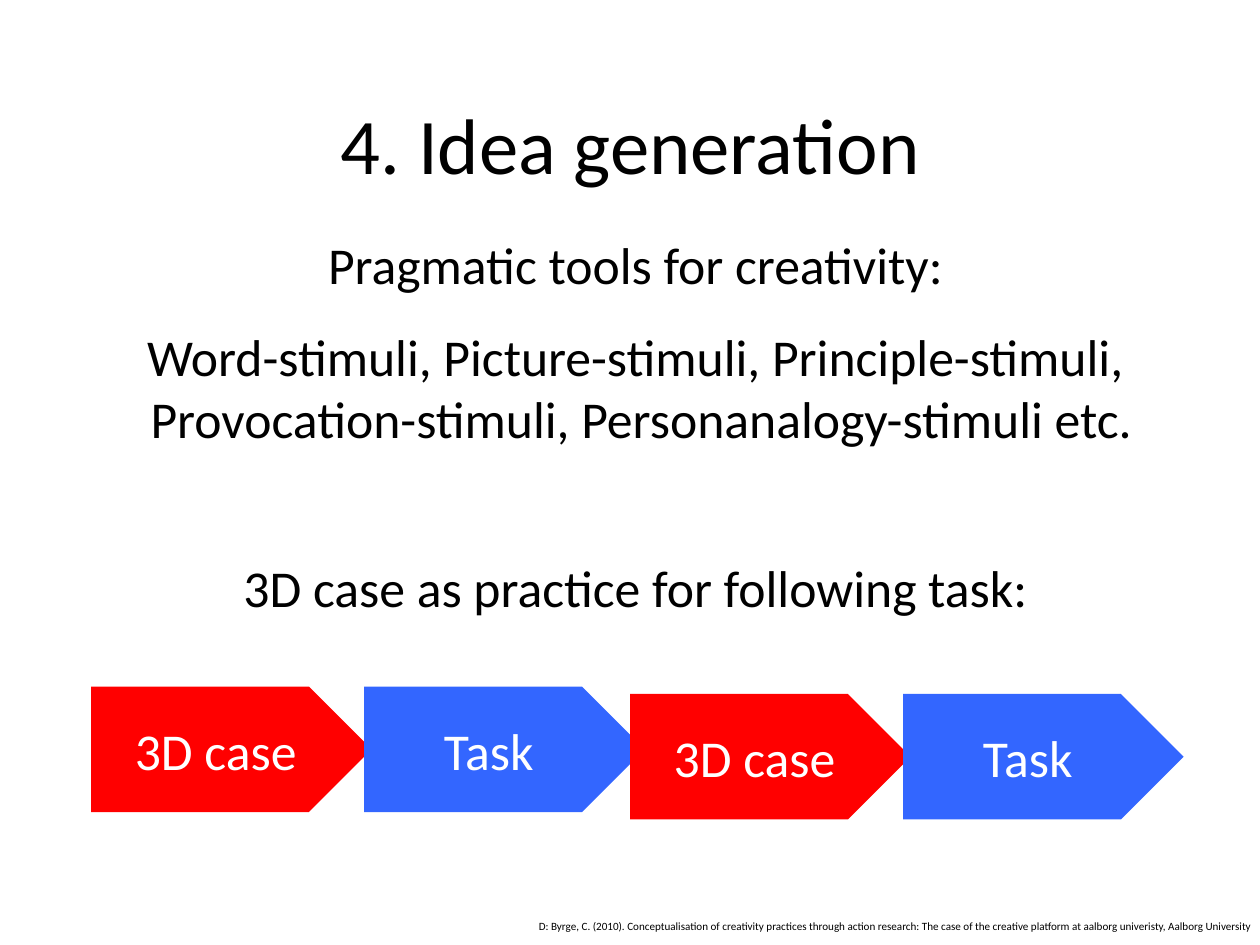
from pptx import Presentation
from pptx.dml.color import RGBColor
from pptx.enum.shapes import MSO_SHAPE as Preset
from pptx.enum.text import MSO_ANCHOR as Anchor, PP_ALIGN as Align
from pptx.util import Pt

BLACK = RGBColor(0x00, 0x00, 0x00)
WHITE = RGBColor(0xFF, 0xFF, 0xFF)
RED = RGBColor(0xFF, 0x00, 0x00)
BLUE = RGBColor(0x33, 0x66, 0xFF)

TITLE_SIZE, BODY_SIZE, SOURCE_SIZE = 64, 42, 9
ARROW_WIDTH, ARROW_HEIGHT, ARROW_STEP = 228, 102, 222


class SlideBuilder:
    """Holds the text style and the current slide."""

    def __init__(self, slide, font="Calibri"):
        self.slide = slide
        self.font = font

    def fill_frame(self, frame, lines, size, color, anchor):
        """Fill a frame with (text, space after) lines, centred."""
        frame.word_wrap = True
        frame.vertical_anchor = anchor
        for index, (text, space_after) in enumerate(lines):
            paragraph = frame.add_paragraph() if index else frame.paragraphs[0]
            paragraph.alignment = Align.CENTER
            paragraph.space_after = Pt(space_after)
            run = paragraph.add_run()
            run.text = text
            run.font.name = self.font
            run.font.size = Pt(size)
            run.font.color.rgb = color

    def text(self, left, top, width, height, lines, size,
             anchor=Anchor.TOP, side_margin=7.2):
        box = self.slide.shapes.add_textbox(
            Pt(left), Pt(top), Pt(width), Pt(height))
        frame = box.text_frame
        frame.margin_left = frame.margin_right = Pt(side_margin)
        self.fill_frame(frame, lines, size, BLACK, anchor)

    def arrow(self, left, top, label, color):
        shape = self.slide.shapes.add_shape(
            Preset.PENTAGON, Pt(left), Pt(top),
            Pt(ARROW_WIDTH), Pt(ARROW_HEIGHT))
        shape.shadow.inherit = False
        shape.fill.solid()
        shape.fill.fore_color.rgb = color
        shape.line.fill.background()
        self.fill_frame(shape.text_frame, [(label, 0)], BODY_SIZE, WHITE,
                        Anchor.MIDDLE)


def main():
    presentation = Presentation()
    presentation.slide_width = Pt(1024)
    presentation.slide_height = Pt(768)
    slide = presentation.slides.add_slide(presentation.slide_layouts[6])
    builder = SlideBuilder(slide)

    # Title
    builder.text(100, 20, 824, 192, [("4. Idea generation", 0)],
                 TITLE_SIZE, anchor=Anchor.MIDDLE)

    # Tools and practice
    builder.text(81.5, 186, 870, 322, [
        ("Pragmatic tools for creativity:", 24),
        ("Word-stimuli, Picture-stimuli, Principle-stimuli,", 0),
        (" Provocation-stimuli, Personanalogy-stimuli etc.", 87),
        ("3D case as practice for following task:", 0),
    ], BODY_SIZE)

    # Source reference
    builder.text(430, 744, 594, 18, [(
        "D: Byrge, C. (2010). Conceptualisation of creativity practices "
        "through action research: The case of the creative platform at "
        "aalborg univeristy, Aalborg University", 0)],
        SOURCE_SIZE, side_margin=0)

    # Two pairs of case and task arrows, the second slightly lower
    for left, top in ((74, 558), (512, 564)):
        builder.arrow(left, top, "3D case", RED)
        builder.arrow(left + ARROW_STEP, top, "Task", BLUE)

    presentation.save("out.pptx")


if __name__ == "__main__":
    main()
